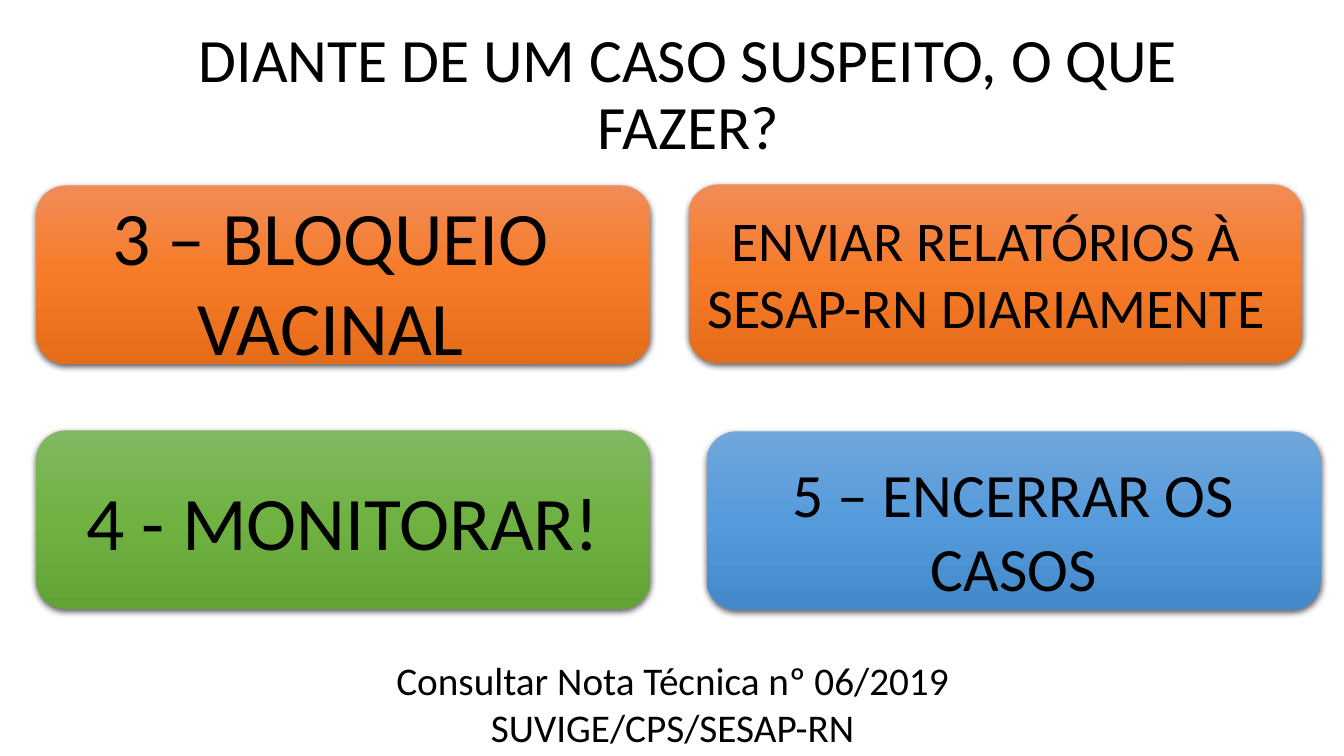
from copy import deepcopy
from dataclasses import dataclass

from lxml.etree import SubElement
from pptx import Presentation
from pptx.dml.color import RGBColor
from pptx.enum.shapes import MSO_SHAPE
from pptx.enum.text import MSO_ANCHOR, PP_ALIGN
from pptx.oxml.ns import qn
from pptx.util import Inches, Pt


@dataclass(frozen=True)
class Theme:
    font = "Calibri"
    text = "000000"
    shadow = "000000"
    orange = ("F18C57", "F67B28", "E56C19")
    green = ("81B861", "6FB242", "62A336")
    blue = ("71A6DB", "559BDB", "448ACA")
    huge = 54
    large = 44
    medium = 40
    small = 28


theme = Theme()

TITLE = ("DIANTE DE UM CASO SUSPEITO, O QUE FAZER?", theme.large, (1.08, 0.23, 11.5, 1.45))
CARD_SIZE = (6.09, 1.77)
CARDS = [
    ((0.36, 1.84), theme.orange, "3 – BLOQUEIO VACINAL", theme.huge, (0.22, 1.83, 6.12, 1.92), True),
    ((0.36, 4.27), theme.green, "4 - MONITORAR!", theme.huge, (0.73, 4.66, 5.35, 1.01), False),
    ((6.83, 1.83), theme.orange, "ENVIAR RELATÓRIOS À SESAP-RN DIARIAMENTE", theme.medium,
     (6.72, 1.99, 6.12, 1.45), True),
    ((7.01, 4.28), theme.blue, "5 – ENCERRAR OS CASOS", theme.large, (7.37, 4.47, 5.37, 1.58), True),
]
REFERENCE = ("Consultar Nota Técnica nº 06/2019 SUVIGE/CPS/SESAP-RN", theme.small, (3.61, 6.46, 6.12, 1.04))


def add_text(slide, text, size, box, wrap=True, anchor=MSO_ANCHOR.TOP, line_spacing=None):
    frame = slide.shapes.add_textbox(*map(Inches, box)).text_frame
    frame.word_wrap = wrap
    frame.vertical_anchor = anchor
    paragraph = frame.paragraphs[0]
    paragraph.alignment = PP_ALIGN.CENTER
    paragraph.line_spacing = line_spacing
    run = paragraph.add_run()
    run.text = text
    run.font.name = theme.font
    run.font.size = Pt(size)
    run.font.color.rgb = RGBColor.from_string(theme.text)


def fill_gradient(shape, colors):
    shape.fill.gradient()
    shape.fill.gradient_angle = 270
    stop_list = shape.element.spPr.find(qn("a:gradFill")).find(qn("a:gsLst"))
    stop_list.insert(1, deepcopy(stop_list[0]))
    for stop, color, position in zip(shape.fill.gradient_stops, colors, (0, 0.5, 1)):
        stop.color.rgb = RGBColor.from_string(color)
        stop.position = position


def add_shadow(shape):
    shape.shadow.inherit = False
    effects = shape.element.spPr.find(qn("a:effectLst"))
    shadow = SubElement(effects, qn("a:outerShdw"), blurRad=str(Pt(4.5)), dist=str(Pt(1.5)),
                        dir="5400000", algn="ctr", rotWithShape="0")
    color = SubElement(shadow, qn("a:srgbClr"), val=theme.shadow)
    SubElement(color, qn("a:alpha"), val="63000")


def add_card(slide, position, colors):
    shape = slide.shapes.add_shape(MSO_SHAPE.ROUNDED_RECTANGLE, *map(Inches, position + CARD_SIZE))
    fill_gradient(shape, colors)
    shape.line.fill.background()
    add_shadow(shape)


def main():
    presentation = Presentation()
    presentation.slide_width = Inches(13.33)
    presentation.slide_height = Inches(7.5)
    slide = presentation.slides.add_slide(presentation.slide_layouts[6])
    add_text(slide, *TITLE, anchor=MSO_ANCHOR.MIDDLE, line_spacing=0.9)
    for position, colors, text, size, box, wrap in CARDS:
        add_card(slide, position, colors)
        add_text(slide, text, size, box, wrap)
    add_text(slide, *REFERENCE)
    presentation.save("out.pptx")


if __name__ == "__main__":
    main()
